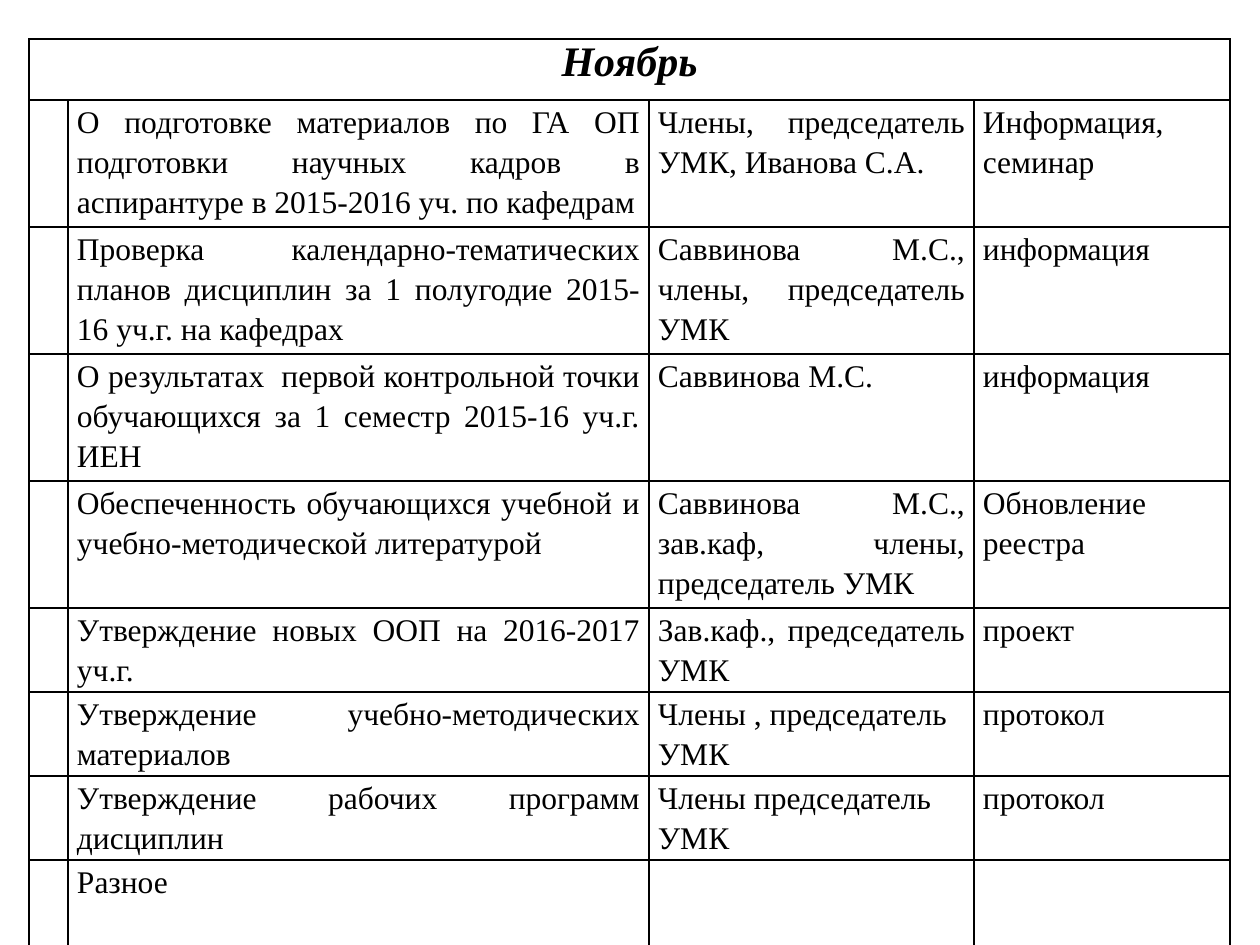
from dataclasses import dataclass

from lxml.etree import SubElement
from pptx import Presentation
from pptx.dml.color import RGBColor
from pptx.enum.text import PP_ALIGN
from pptx.oxml.ns import qn
from pptx.table import _Cell
from pptx.util import Inches, Pt

PX = Inches(1) / 126
FONT = "Times New Roman"
BLACK = "000000"
COLS = [39, 581, 325, 256]
ROWS = [61] + [127] * 4 + [84] * 3 + [86]


@dataclass
class Item:
    topic: str
    people: str = ""
    result: str = ""
    people_align: PP_ALIGN = PP_ALIGN.JUSTIFY


ITEMS = [
    Item("О подготовке материалов по ГА ОП подготовки научных кадров в аспирантуре в 2015-2016 уч. по кафедрам",
         "Члены, председатель УМК, Иванова С.А.", "Информация, семинар"),
    Item("Проверка календарно-тематических планов дисциплин за 1 полугодие 2015-16 уч.г. на кафедрах",
         "Саввинова М.С., члены, председатель УМК", "информация"),
    Item("О результатах  первой контрольной точки обучающихся за 1 семестр 2015-16 уч.г. ИЕН",
         "Саввинова М.С.", "информация"),
    Item("Обеспеченность обучающихся учебной и учебно-методической литературой",
         "Саввинова М.С., зав.каф, члены, председатель УМК", "Обновление реестра"),
    Item("Утверждение новых ООП на 2016-2017 уч.г.",
         "Зав.каф., председатель УМК", "проект"),
    Item("Утверждение учебно-методических материалов",
         "Члены , председатель УМК", "протокол", PP_ALIGN.LEFT),
    Item("Утверждение рабочих программ дисциплин",
         "Члены председатель УМК", "протокол", PP_ALIGN.LEFT),
    Item("Разное"),
]


def px(n: int) -> int:
    return round(n * PX)


def rgb(color: str) -> RGBColor:
    return RGBColor.from_string(color)


def style_cell(cell: _Cell, margin: int) -> None:
    cell.margin_left = cell.margin_right = px(margin)
    cell.margin_top = cell.margin_bottom = 0
    tcPr = cell._tc.get_or_add_tcPr()
    for side in ("lnL", "lnR", "lnT", "lnB"):
        ln = SubElement(tcPr, qn(f"a:{side}"), w=str(Pt(1)))
        fill = SubElement(ln, qn("a:solidFill"))
        SubElement(fill, qn("a:srgbClr"), val=BLACK)
    cell.fill.background()


def write(cell: _Cell, text: str, size: int, align: PP_ALIGN, spacing: float = 1.0, strong: bool = False) -> None:
    p = cell.text_frame.paragraphs[0]
    p.text = text
    p.alignment = align
    p.line_spacing = spacing
    p.font.name = FONT
    p.font.size = Pt(size)
    p.font.bold = p.font.italic = strong
    p.font.color.rgb = rgb(BLACK)


def main() -> None:
    prs = Presentation()
    prs.slide_width, prs.slide_height = Inches(10), Inches(7.5)
    s = prs.slides.add_slide(prs.slide_layouts[6])
    table = s.shapes.add_table(len(ROWS), len(COLS), px(29), px(39), px(sum(COLS)), px(sum(ROWS))).table
    table.first_row = table.horz_banding = False
    for col, width in zip(table.columns, COLS):
        col.width = px(width)
    for i, (row, height) in enumerate(zip(table.rows, ROWS)):
        row.height = px(height)
        for cell in row.cells:
            style_cell(cell, 9 if i else 6)

    header = table.cell(0, 0)
    header.merge(table.cell(0, len(COLS) - 1))
    write(header, "Ноябрь", 24, PP_ALIGN.CENTER, strong=True)

    for i, item in enumerate(ITEMS, 1):
        entries = [(item.topic, PP_ALIGN.JUSTIFY), (item.people, item.people_align), (item.result, PP_ALIGN.JUSTIFY)]
        for j, (text, align) in enumerate(entries, 1):
            if text:
                write(table.cell(i, j), text, 18, align, 1.15)
    prs.save("out.pptx")


if __name__ == "__main__":
    main()
